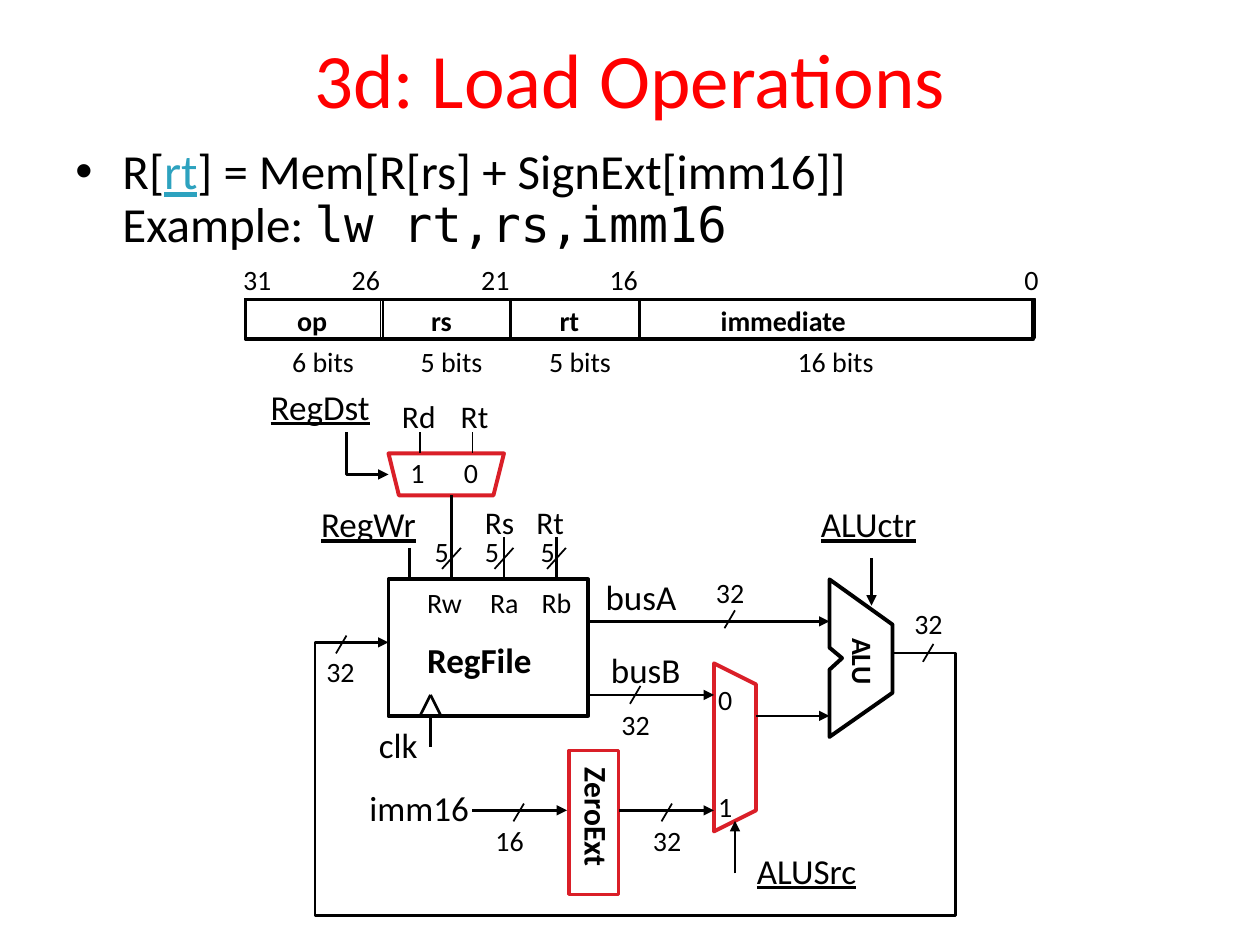
from dataclasses import dataclass

from lxml import etree
from pptx import Presentation
from pptx.dml.color import RGBColor
from pptx.enum.shapes import MSO_CONNECTOR, MSO_SHAPE
from pptx.enum.text import MSO_ANCHOR, MSO_AUTO_SIZE, PP_ALIGN
from pptx.oxml.ns import qn
from pptx.util import Cm, Pt

RECTANGLE = MSO_SHAPE.RECTANGLE
STRAIGHT = MSO_CONNECTOR.STRAIGHT
MIDDLE, TOP = MSO_ANCHOR.MIDDLE, MSO_ANCHOR.TOP
CENTER = PP_ALIGN.CENTER
FIT_SHAPE = MSO_AUTO_SIZE.SHAPE_TO_FIT_TEXT


@dataclass(frozen=True)
class Theme:
    font: str = "Calibri"
    code_font: str = "DejaVu Sans Mono"
    ink: RGBColor = RGBColor(0, 0, 0)
    title: RGBColor = RGBColor(0xFF, 0, 0)
    accent: RGBColor = RGBColor(0x2D, 0xA2, 0xBF)
    added: RGBColor = RGBColor(0xDA, 0x1F, 0x28)
    title_size: int = 44
    body_size: int = 28
    signal_size: int = 20
    port_size: int = 18
    small_size: int = 16
    thin: float = 1
    wire: float = 1.5
    frame: float = 2
    block: float = 2.25


THEME = Theme()


@dataclass(frozen=True)
class Region:
    """An area of the page with its own origin and unit, both in centimetres."""
    page: object
    left: float
    top: float
    unit: float = 1

    def point(self, x, y):
        return Cm(self.left + x * self.unit), Cm(self.top + y * self.unit)

    def length(self, value):
        return Cm(value * self.unit)


def write(para, text, size=THEME.small_size, color=THEME.ink, font=THEME.font,
          bold=False, underline=False):
    span = para.add_run()
    span.text = text
    span.font.name = font
    span.font.size = Pt(size)
    span.font.color.rgb = color
    span.font.bold = bold
    span.font.underline = underline


def add_label(region, text, x, y, width, size=THEME.small_size, rotation=0, **style):
    box = region.page.shapes.add_textbox(
        *region.point(x, y), region.length(width), Cm(size * 0.057))
    box.rotation = rotation
    box.text_frame.word_wrap = False
    box.text_frame.auto_size = FIT_SHAPE
    write(box.text_frame.paragraphs[0], text, size=size, **style)


def set_line(shape, color, weight, arrow=False):
    shape.line.color.rgb = color
    shape.line.width = Pt(weight)
    if arrow:
        line = shape._element.spPr.find(qn("a:ln"))
        etree.SubElement(line, qn("a:tailEnd"), type="triangle")


def add_line(region, start, end, weight=THEME.wire, arrow=False):
    line = region.page.shapes.add_connector(
        STRAIGHT, *region.point(*start), *region.point(*end))
    set_line(line, THEME.ink, weight, arrow)
    etree.SubElement(line._element.spPr, qn("a:effectLst"))


def add_slash(region, x, y, width=1, height=1.7):
    """Bus-width mark centred on a wire."""
    add_line(region, (x + width / 2, y - height / 2),
             (x - width / 2, y + height / 2), THEME.thin)


def add_rectangle(region, x, y, width, height, color=THEME.ink, weight=THEME.block):
    shape = region.page.shapes.add_shape(
        RECTANGLE, *region.point(x, y), region.length(width), region.length(height))
    shape.shadow.inherit = False
    shape.fill.background()
    set_line(shape, color, weight)


def add_outline(region, points, color=THEME.ink, weight=THEME.block,
                closed=True, arrow=False):
    first, *others = [region.point(*point) for point in points]
    builder = region.page.shapes.build_freeform(*first)
    builder.add_line_segments(others, close=closed)
    shape = builder.convert_to_shape()
    shape.shadow.inherit = False
    shape.fill.background()
    set_line(shape, color, weight, arrow)


def add_title(page, left, top, width, height):
    title = page.shapes.title
    title.left, title.top, title.width, title.height = map(Cm, (left, top, width, height))
    title.text_frame.vertical_anchor = MIDDLE
    para = title.text_frame.paragraphs[0]
    para.alignment = CENTER
    write(para, "3d: Load Operations", size=THEME.title_size, color=THEME.title)


def add_definition(page, left, top, width, height):
    box = page.shapes.add_textbox(*map(Cm, (left, top, width, height)))
    box.text_frame.word_wrap = True
    box.text_frame.vertical_anchor = TOP
    para = box.text_frame.paragraphs[0]
    para.line_spacing = 0.9
    settings = para._p.get_or_add_pPr()
    settings.set("marL", str(Cm(0.95)))
    settings.set("indent", str(Cm(-0.95)))
    etree.SubElement(settings, qn("a:buFont"), typeface="Arial")
    etree.SubElement(settings, qn("a:buChar"), char="•")
    size = THEME.body_size
    write(para, "R[", size=size)
    write(para, "rt", size=size, color=THEME.accent, underline=True)
    write(para, "] = Mem[R[rs] + SignExt[imm16]]", size=size)
    para.add_line_break()
    write(para, "Example: ", size=size)
    write(para, "lw rt,rs,imm16", size=size, font=THEME.code_font)


def add_instruction_format(region):
    height = 0.8
    add_rectangle(region, 0.02, 0.02, 15.88, height, weight=THEME.frame)
    # field left and width, name with left and width, bit count with left and width
    fields = [
        (0, 2.74, "op", 0.81, 1.12, "6 bits", 0.71, 1.78),
        (2.79, 2.57, "rs", 3.51, 0.94, "5 bits", 3.3, 1.78),
        (5.38, 2.57, "rt", 6.1, 0.94, "5 bits", 5.89, 1.78),
        (7.98, 7.95, "immediate", 9.35, 3.07, "16 bits", 10.9, 2.06),
    ]
    for x, width, name, name_x, name_width, bits, bits_x, bits_width in fields:
        add_rectangle(region, x, 0, width, height, weight=THEME.thin)
        add_label(region, name, name_x, -0.03, name_width, bold=True)
        add_label(region, bits, bits_x, height, bits_width)
    positions = [("31", -0.28, 1.09), ("26", 1.91, 1.09), ("21", 4.52, 1.09),
                 ("16", 7.11, 1.09), ("0", 15.47, 0.79)]
    for number, x, width in positions:
        add_label(region, number, x, -0.86, width)


def add_datapath_blocks(region):
    add_rectangle(region, 7, 18, 19, 13)
    add_label(region, "RegFile", 9.5, 23, 12.5, size=THEME.signal_size, bold=True)
    add_rectangle(region, 24.2, 34.3, 4.7, 13.7, color=THEME.added, weight=THEME.frame)
    add_label(region, "ZeroExt", 20.9, 38.3, 11.9, size=THEME.port_size,
              rotation=90, bold=True)
    register_mux = [(7, 6), (8, 10), (17, 10), (18, 6)]
    source_mux = [(38, 26), (38, 42), (42, 40), (42, 28)]
    for mux in (register_mux, source_mux):
        add_outline(region, mux, color=THEME.added)
    add_outline(region, [(49, 18), (49, 24.5), (50.2, 25.5), (49, 26.6),
                         (49, 33), (55, 28.8), (55, 22.3)])
    add_label(region, "ALU", 48.7, 23.8, 7.1, rotation=90, bold=True)


def add_datapath_wires(region):
    for x in (10, 15):
        add_line(region, (x, 4), (x, 6), THEME.thin)
    for x, top in ((9, 15), (13, 10), (18, 14), (23, 14)):
        add_line(region, (x, top), (x, 18))
    for start, end in (((11, 29), (10, 31)), ((11, 29), (12, 31)), ((11, 31), (11, 34))):
        add_line(region, start, end)
    arrows = [((26, 22), (49, 22)), ((26, 29), (38, 29)), ((42, 31), (49, 31)),
              ((29, 40), (38, 40)), ((15, 40), (24, 40)),
              ((53, 16), (53, 20.5)), ((40, 46), (40, 41))]
    for start, end in arrows:
        add_line(region, start, end, arrow=True)
    select = [(3, 4), (3, 8), (7, 8)]
    write_back = [(55, 25), (61, 25), (61, 50), (0, 50), (0, 24), (7, 24)]
    for route in (select, write_back):
        add_outline(region, route, weight=THEME.wire, closed=False, arrow=True)
    for x in (13, 18, 23):
        add_slash(region, x, 16, width=1.8, height=2)
    for x, y in ((2.5, 24.2), (39.5, 21.8), (30.5, 29), (33.5, 40.2),
                 (19.4, 40.2), (58.4, 25)):
        add_slash(region, x, y)


def add_datapath_labels(region):
    controls = [("RegDst", -5.4, -1.1, 12.4), ("RegWr", -0.6, 10.1, 11.5),
                ("ALUctr", 47, 10.1, 13.7), ("ALUSrc", 40.9, 43.1, 11.9)]
    for label in controls:
        add_label(region, *label, size=THEME.signal_size, underline=True)
    signals = [("clk", 4.9, 31.1, 6.1), ("busA", 26.5, 17, 9.4),
               ("busB", 27, 24, 9.2), ("imm16", 4, 37.1, 12)]
    for label in signals:
        add_label(region, *label, size=THEME.signal_size)
    registers = [("Rd", 7.1, 0, 5.6), ("Rt", 12.7, 0, 5.2),
                 ("Rs", 15, 10.1, 5.3), ("Rt", 19.9, 10.1, 5.2)]
    for label in registers:
        add_label(region, *label, size=THEME.port_size)
    for label in (("Rw", 9.5, 18, 5.8), ("Ra", 15.5, 18, 5.3), ("Rb", 20.4, 18, 5.5)):
        add_label(region, *label)
    digits = [("5", 10.2, 13.1), ("5", 15, 13.1), ("5", 20.3, 13.1), ("1", 7.9, 5.6),
              ("0", 13, 5.6), ("0", 37.2, 27.2), ("1", 37.2, 37.4)]
    for digit, x, y in digits:
        add_label(region, digit, x, y, 3.7)
    widths = [("32", 55.9, 20), ("32", -0.1, 24.6), ("32", 37, 17),
              ("32", 28, 29.6), ("32", 31, 40.7), ("16", 16, 40.7)]
    for bits, x, y in widths:
        add_label(region, bits, x, y, 5.2)


def main():
    deck = Presentation()
    deck.slide_width, deck.slide_height = Cm(25.4), Cm(19.05)
    page = deck.slides.add_slide(deck.slide_layouts[5])
    add_title(page, 1.27, -0.03, 22.86, 3.18)
    add_definition(page, 1.27, 2.84, 22.86, 3.78)
    add_instruction_format(Region(page, 4.93, 6.02))
    datapath = Region(page, 6.35, 7.87, unit=2.54 / 12)
    add_datapath_blocks(datapath)
    add_datapath_wires(datapath)
    add_datapath_labels(datapath)
    deck.save("out.pptx")


if __name__ == "__main__":
    main()
